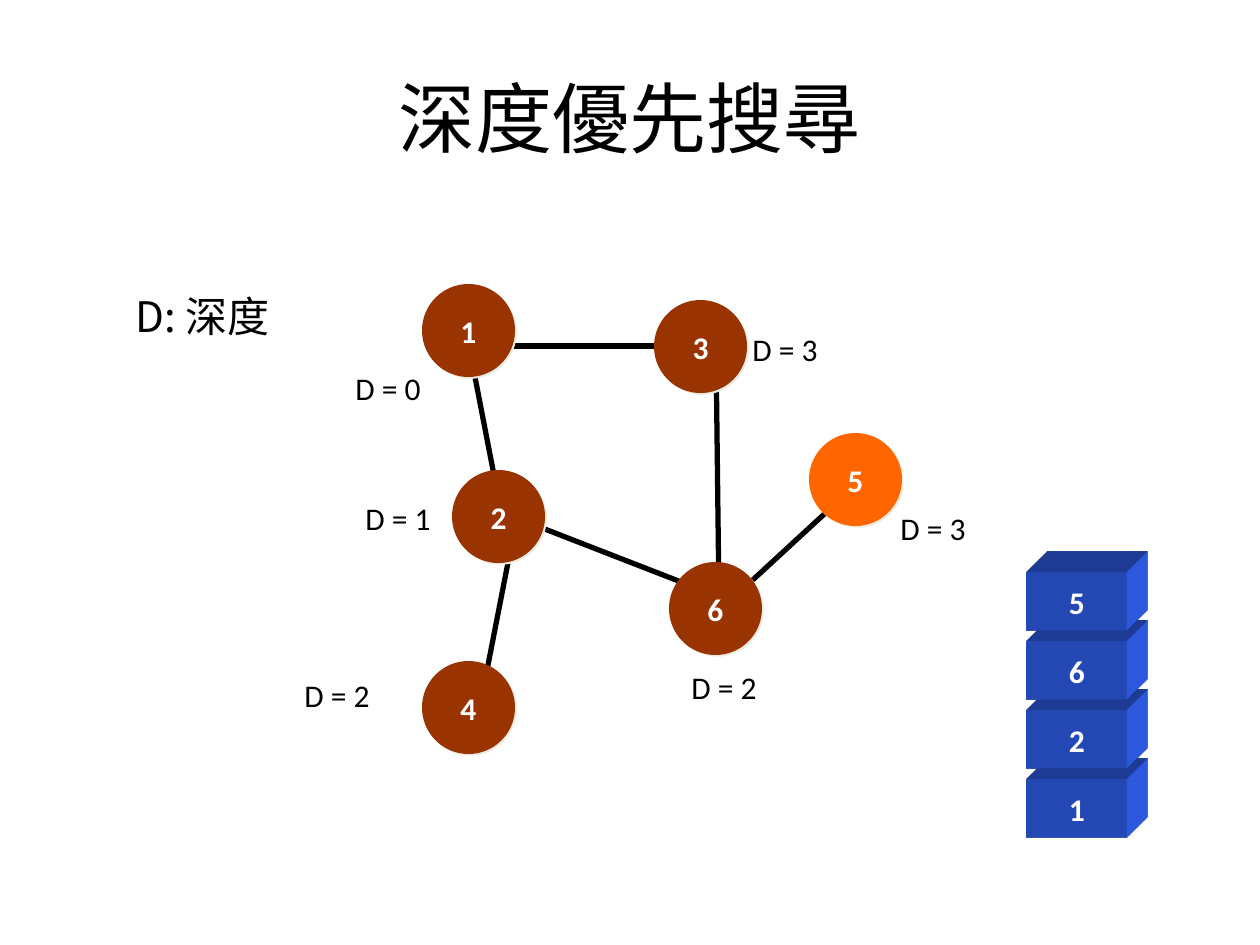
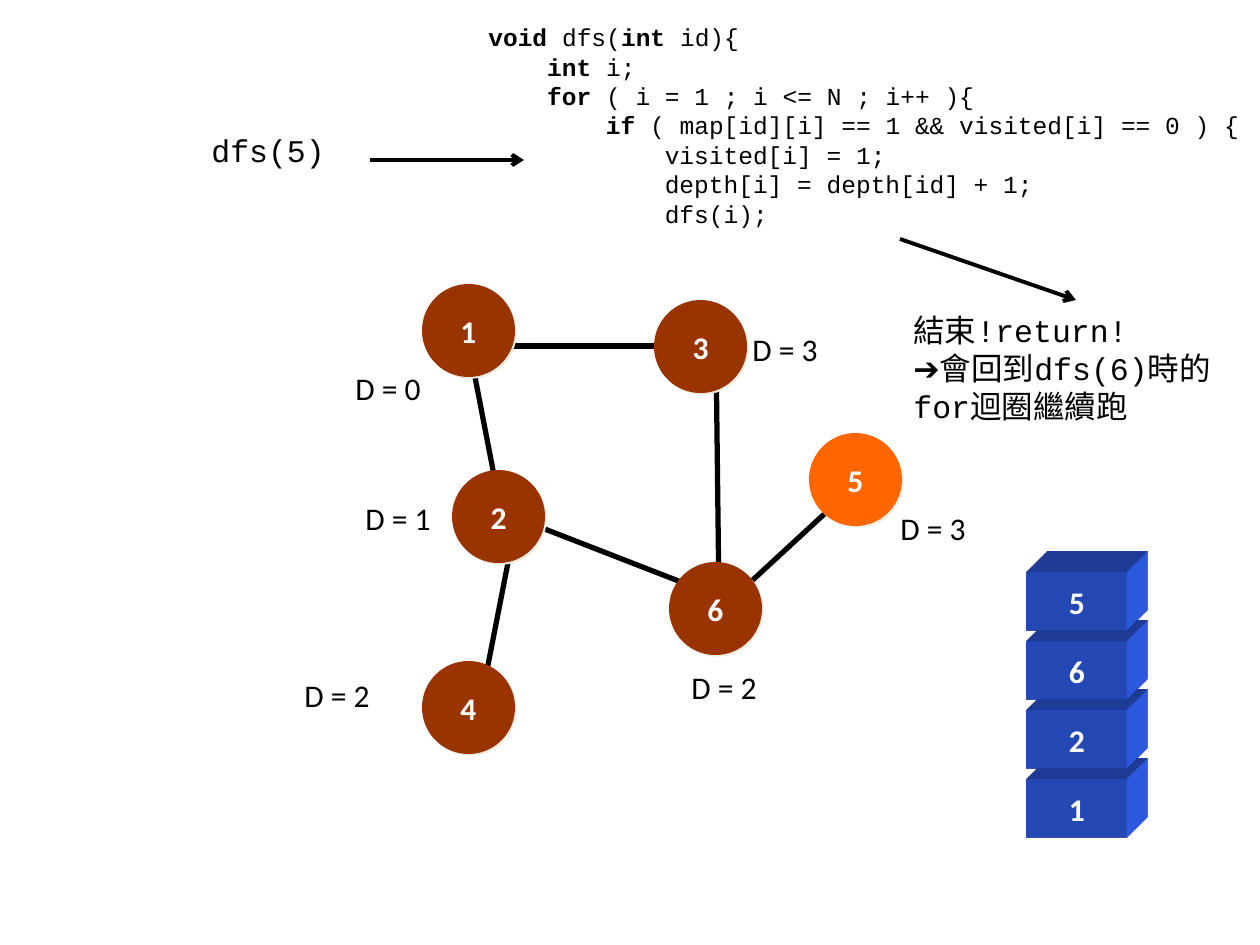
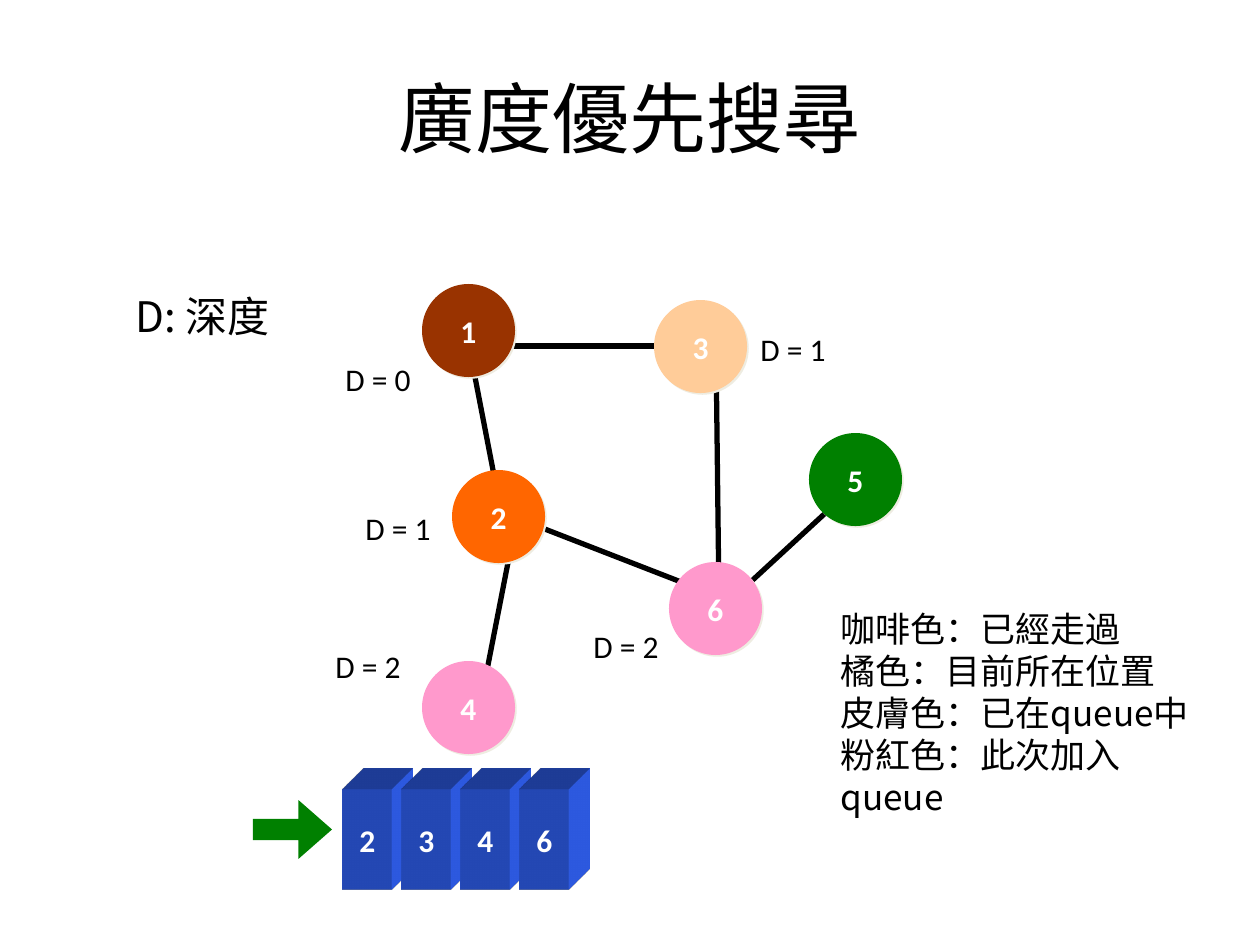
from dataclasses import dataclass

from lxml import etree
from pptx import Presentation
from pptx.dml.color import RGBColor
from pptx.enum.shapes import MSO_CONNECTOR, MSO_SHAPE
from pptx.enum.text import MSO_ANCHOR, MSO_AUTO_SIZE, PP_ALIGN
from pptx.oxml import parse_xml
from pptx.oxml.ns import nsdecls, qn
from pptx.util import Emu, Pt


@dataclass(frozen=True)
class TextStyle:
    size: int
    font: str
    color: str = "000000"
    bold: bool = False


class Theme:
    cjk = "Noto Sans CJK SC"
    ink, shade, box = "000000", "EEECE1", "3366FF"
    visited, current, untouched = "993300", "FF6600", "008000"
    queued, joining = "FFCC99", "FF99CC"
    title = TextStyle(44, cjk)
    key = TextStyle(24, cjk)
    legend = TextStyle(20, cjk)
    depth = TextStyle(18, "Calibri")
    number = TextStyle(18, "Calibri", "FFFFFF", True)
    call = TextStyle(18, "Courier New")
    code = TextStyle(14, "Courier New")
    edge_width, arrow_width = 3, 2.25


# Content; all lengths in px, 126 to the inch
SLIDE_SIZE = (1260, 945)
TITLE_BOX = (63, 38, 1134, 158)
DEPTH_KEY = ("D: 深度", (123, 284, 173, 63))

NODE_SIZE = 93
NODES = {1: (422, 284), 3: (654, 300), 2: (452, 470),
         4: (422, 661), 6: (669, 562), 5: (809, 433)}
EDGES = [(469, 346, 499, 501), (514, 532, 481, 701), (484, 346, 670, 346),
         (716, 346, 719, 601), (730, 601, 858, 483), (730, 601, 501, 512)]

DEPTH_SIZE = (102, 50)
DFS_DEPTHS = [(0, 343, 363), (1, 353, 493), (2, 292, 670),
              (2, 679, 662), (3, 740, 324), (3, 888, 503)]
BFS_DEPTHS = [(0, 333, 354), (1, 353, 503), (1, 748, 324),
              (2, 323, 641), (2, 581, 621)]
DFS_COLORS = dict.fromkeys(NODES, Theme.visited) | {5: Theme.current}
BFS_COLORS = {1: Theme.visited, 2: Theme.current, 3: Theme.queued,
              4: Theme.joining, 5: Theme.untouched, 6: Theme.joining}

# numbers, first box, step from one box to the next
DFS_STACK = ((1, 2, 6, 5), (1027, 779, 100, 59), (0, -69))
BFS_QUEUE = ((2, 3, 4, 6), (343, 790, 49, 100), (59, 0))
QUEUE_POINTER = (253, 800, 79, 59)

CALL = ("dfs(5)", (199, 125, 140, 50))
CALL_ARROW = (370, 160, 524, 160)
RETURN_ARROW = (900, 239, 1076, 300)
RETURN_NOTE = ("結束!return!\n➔會回到dfs(6)時的for迴圈繼續跑", (901, 305, 324, 127))
CODE_BOX = (476, 16, 780, 221)
# indent level, then pieces that alternate between keyword and plain
CODE = [(0, ("void ", "dfs(", "int ", "id){")),
        (1, ("int ", "i;")),
        (1, ("for", " ( i = 1 ; i <= N ; i++ ){")),
        (2, ("if", " ( map[id][i] == 1 && visited[i] == 0 ) {")),
        (3, ("", "visited[i] = 1;")),
        (3, ("", "depth[i] = depth[id] + 1;")),
        (3, ("", "dfs(i);"))]
CODE_INDENT = Pt(4 * 0.6 * Theme.code.size)  # four Courier characters

LEGEND = ("咖啡色：已經走過\n橘色：目前所在位置\n皮膚色：已在queue中\n粉紅色：此次加入queue",
          (828, 601, 393, 180))


def px(*lengths):
    return [Emu(length * 914400 // 126) for length in lengths]


def rgb(color):
    return RGBColor.from_string(color)


def style_run(run, style, bold=None):
    run.font.size = Pt(style.size)
    run.font.name = style.font
    run.font.bold = style.bold if bold is None else bold
    run.font.color.rgb = rgb(style.color)
    east_asian = etree.Element(qn("a:ea"), typeface=Theme.cjk)
    run.font._element.find(qn("a:latin")).addnext(east_asian)


def write(frame, text, style, align=PP_ALIGN.LEFT):
    frame.text = text
    for paragraph in frame.paragraphs:
        paragraph.alignment = align
        for run in paragraph.runs:
            style_run(run, style)


def add_label(slide, text, box, style, wrap=False):
    frame = slide.shapes.add_textbox(*px(*box)).text_frame
    frame.word_wrap = wrap
    frame.auto_size = MSO_AUTO_SIZE.SHAPE_TO_FIT_TEXT
    write(frame, text, style)
    return frame


def add_figure(shapes, preset, box, color, number=None):
    figure = shapes.add_shape(preset, *px(*box))
    figure.shadow.inherit = False
    figure.fill.solid()
    figure.fill.fore_color.rgb = rgb(color)
    figure.line.fill.background()
    if number is not None:
        frame = figure.text_frame
        frame.word_wrap = False
        frame.vertical_anchor = MSO_ANCHOR.MIDDLE
        write(frame, str(number), Theme.number, PP_ALIGN.CENTER)
    return figure


def add_line(shapes, ends, width, arrow=False):
    line = shapes.add_connector(MSO_CONNECTOR.STRAIGHT, *px(*ends))
    line.line.color.rgb = rgb(Theme.ink)
    line.line.width = Pt(width)
    if arrow:
        etree.SubElement(line.line._get_or_add_ln(), qn("a:tailEnd"), type="arrow")
    etree.SubElement(line._element.spPr, qn("a:effectLst"))


def cast_shadow(figure):
    effects = figure._element.spPr.find(qn("a:effectLst"))
    effects.append(parse_xml(
        f'<a:outerShdw {nsdecls("a")} dist="17961" dir="2700000" algn="ctr">'
        f'<a:srgbClr val="{Theme.shade}"/></a:outerShdw>'))


def extrude(figure):
    """Turn a flat box into a block seen from its top right."""
    properties = figure._element.spPr
    properties.append(parse_xml(
        f'<a:scene3d {nsdecls("a")}><a:camera prst="legacyObliqueTopRight"/>'
        '<a:lightRig rig="legacyFlat3" dir="b"/></a:scene3d>'))
    properties.append(parse_xml(
        f'<a:sp3d {nsdecls("a")} extrusionH="430200" prstMaterial="legacyMatte">'
        f'<a:extrusionClr><a:srgbClr val="{Theme.box}"/></a:extrusionClr></a:sp3d>'))


def add_graph(slide, colors, depths):
    graph = slide.shapes.add_group_shape().shapes
    for edge in EDGES:
        add_line(graph, edge, Theme.edge_width)
    for number, corner in NODES.items():
        cast_shadow(add_figure(graph, MSO_SHAPE.OVAL, (*corner, NODE_SIZE, NODE_SIZE),
                               colors[number], number))
    for depth, left, top in depths:
        add_label(slide, f"D = {depth}", (left, top, *DEPTH_SIZE), Theme.depth)


def add_blocks(slide, numbers, first, step):
    left, top, width, height = first
    for place, number in enumerate(numbers):
        box = (left + place * step[0], top + place * step[1], width, height)
        extrude(add_figure(slide.shapes, MSO_SHAPE.RECTANGLE, box, Theme.box, number))


def add_titled_slide(deck, heading):
    slide = deck.slides.add_slide(deck.slide_layouts[5])
    title = slide.shapes.title
    title.left, title.top, title.width, title.height = px(*TITLE_BOX)
    title.text_frame.vertical_anchor = MSO_ANCHOR.MIDDLE
    write(title.text_frame, heading, Theme.title, PP_ALIGN.CENTER)
    add_label(slide, *DEPTH_KEY, Theme.key)
    return slide


def add_code(slide):
    frame = add_label(slide, "\n" * (len(CODE) - 1), CODE_BOX, Theme.code, wrap=True)
    for paragraph, (level, pieces) in zip(frame.paragraphs, CODE):
        paragraph._p.get_or_add_pPr().set("marL", str(level * CODE_INDENT))
        for place, piece in enumerate(pieces):
            if piece:
                run = paragraph.add_run()
                run.text = piece
                style_run(run, Theme.code, bold=place % 2 == 0)


def add_dfs_state(slide):
    add_graph(slide, DFS_COLORS, DFS_DEPTHS)
    add_blocks(slide, *DFS_STACK)


def add_dfs_return(deck):
    slide = deck.slides.add_slide(deck.slide_layouts[6])
    add_dfs_state(slide)
    add_label(slide, *CALL, Theme.call)
    add_code(slide)
    add_label(slide, *RETURN_NOTE, Theme.call, wrap=True)
    for arrow in (CALL_ARROW, RETURN_ARROW):
        add_line(slide.shapes, arrow, Theme.arrow_width, arrow=True)


def add_bfs(deck):
    slide = add_titled_slide(deck, "廣度優先搜尋")
    add_graph(slide, BFS_COLORS, BFS_DEPTHS)
    add_blocks(slide, *BFS_QUEUE)
    pointer = add_figure(slide.shapes, MSO_SHAPE.RIGHT_ARROW, QUEUE_POINTER,
                         Theme.untouched)
    pointer.adjustments[0], pointer.adjustments[1] = 0.36, 0.57
    add_label(slide, *LEGEND, Theme.legend, wrap=True)


def main():
    deck = Presentation()
    deck.slide_width, deck.slide_height = px(*SLIDE_SIZE)
    add_dfs_state(add_titled_slide(deck, "深度優先搜尋"))
    add_dfs_return(deck)
    add_bfs(deck)
    deck.save("out.pptx")


if __name__ == "__main__":
    main()
